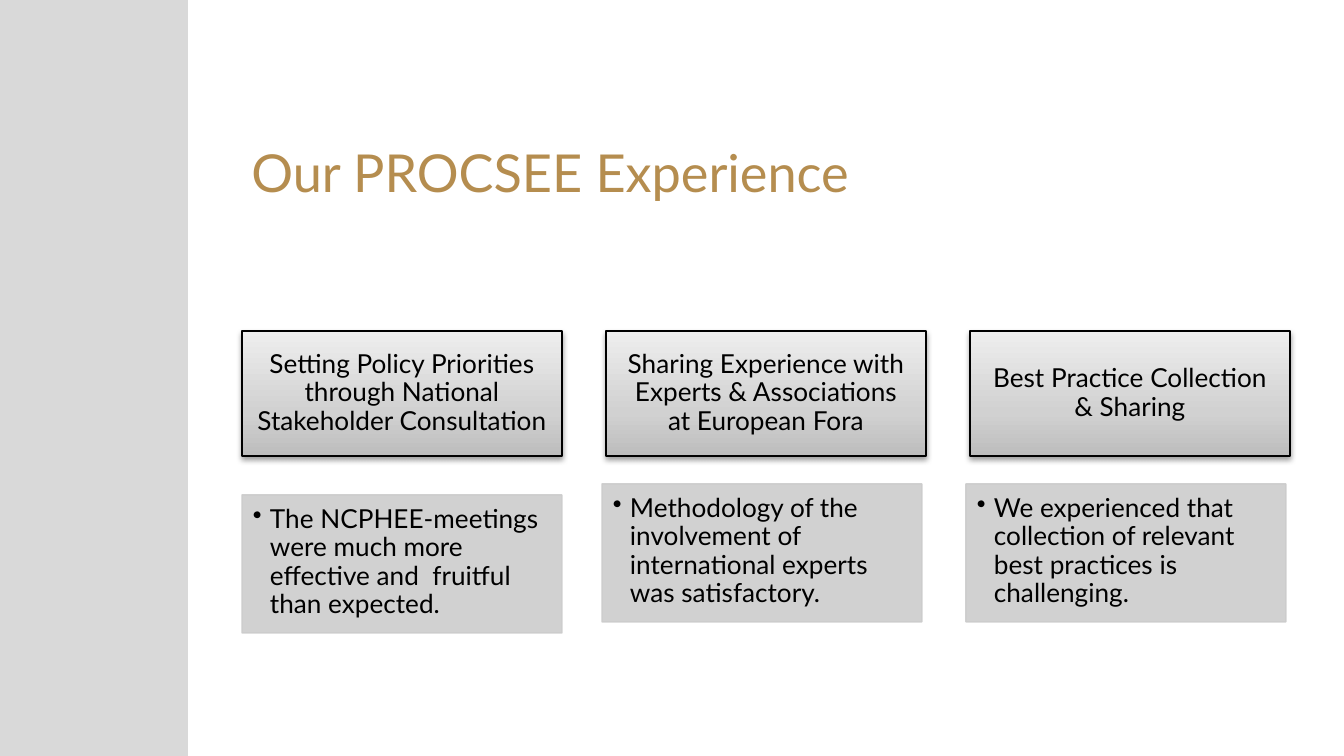
from copy import deepcopy

from lxml import etree
from pptx import Presentation
from pptx.dml.color import RGBColor
from pptx.enum.shapes import MSO_SHAPE
from pptx.enum.text import MSO_ANCHOR, PP_ALIGN
from pptx.oxml.ns import qn
from pptx.util import Emu, Pt

EMU_PER_PX = 914400 / 134.4
RECTANGLE = MSO_SHAPE.RECTANGLE
TOP, MIDDLE = MSO_ANCHOR.TOP, MSO_ANCHOR.MIDDLE
LEFT, CENTER = PP_ALIGN.LEFT, PP_ALIGN.CENTER
TITLE_ONLY = 5
FONT = "Lato"

COLORS = {
    "sidebar": "D9D9D9",
    "title": "B58D4F",
    "text": "000000",
    "detail": "CCCCCC",
    "gradient_dark": "BDBDBD",
    "gradient_middle": "D1D1D1",
    "gradient_light": "EEEEEE",
}
HEADING_GRADIENT = [(0, "gradient_dark"), (0.35, "gradient_middle"), (1, "gradient_light")]

COLUMN_LEFT, COLUMN_STEP, COLUMN_WIDTH = 242, 364, 320
HEADING_TOP, HEADING_HEIGHT, DETAIL_HEIGHT = 331, 125, 138
COLUMNS = [
    ("Setting Policy Priorities through National Stakeholder Consultation",
     "The NCPHEE-meetings were much more effective and  fruitful than expected.", 0, 495),
    ("Sharing Experience with Experts & Associations at European Fora",
     "Methodology of the involvement of international experts was satisfactory.", -4, 484),
    ("Best Practice Collection & Sharing",
     "We experienced that collection of relevant best practices is challenging.", -4, 484),
]


def px(value):
    return Emu(round(value * EMU_PER_PX))


def color(name):
    return RGBColor.from_string(COLORS[name])


def add_rectangle(slide, left, top, width, height, line_color, line_width):
    shape = slide.shapes.add_shape(RECTANGLE, px(left), px(top), px(width), px(height))
    shape.shadow.inherit = False
    shape.line.color.rgb = color(line_color)
    shape.line.width = Pt(line_width)
    return shape


def fill_solid(shape, name):
    shape.fill.solid()
    shape.fill.fore_color.rgb = color(name)


def fill_gradient(shape, stops):
    shape.fill.gradient()
    shape.fill.gradient_angle = 90
    stop_list = shape.element.spPr.find(".//" + qn("a:gsLst"))
    stop_list.insert(1, deepcopy(stop_list[0]))
    for stop, (position, name) in zip(shape.fill.gradient_stops, stops):
        stop.position = position
        stop.color.rgb = color(name)


def set_opacity(element, percent):
    for color_element in element.iter(qn("a:srgbClr")):
        etree.SubElement(color_element, qn("a:alpha"), val=str(percent * 1000))


def add_shadow(shape):
    effects = shape.element.spPr.find(qn("a:effectLst"))
    shadow = etree.SubElement(effects, qn("a:outerShdw"), blurRad=str(Pt(3.1)),
                              dist=str(Pt(1.6)), dir="5400000", rotWithShape="0")
    etree.SubElement(shadow, qn("a:srgbClr"), val=COLORS["text"])
    set_opacity(shadow, 38)


def add_bullet(paragraph, indent):
    properties = paragraph._p.get_or_add_pPr()
    properties.set("marL", str(px(indent)))
    properties.set("indent", str(-px(indent)))
    etree.SubElement(properties, qn("a:buChar"), char="•")


def format_paragraph(paragraph, size, name, alignment):
    paragraph.alignment = alignment
    paragraph.font.name = FONT
    paragraph.font.size = Pt(size)
    paragraph.font.color.rgb = color(name)


def set_text(shape, text, anchor, insets):
    frame = shape.text_frame
    frame.word_wrap = True
    frame.vertical_anchor = anchor
    (frame.margin_left, frame.margin_top,
     frame.margin_right, frame.margin_bottom) = map(px, insets)
    paragraph = frame.paragraphs[0]
    paragraph.text = text
    paragraph.line_spacing = 0.9
    return paragraph


def add_sidebar(slide):
    sidebar = add_rectangle(slide, 0, 0, 186, 756, "sidebar", 2)
    fill_solid(sidebar, "sidebar")


def set_title(slide, text):
    title = slide.shapes.title
    title.left, title.top, title.width, title.height = map(px, (238, 132, 1048, 79))
    title.text_frame.text = text
    title.text_frame.vertical_anchor = MIDDLE
    format_paragraph(title.text_frame.paragraphs[0], 28, "title", LEFT)


def add_heading(slide, left, text):
    heading = add_rectangle(slide, left, HEADING_TOP, COLUMN_WIDTH, HEADING_HEIGHT, "text", 0.75)
    fill_gradient(heading, HEADING_GRADIENT)
    add_shadow(heading)
    paragraph = set_text(heading, text, MIDDLE, (15, 8, 15, 8))
    format_paragraph(paragraph, 14, "text", CENTER)


def add_detail(slide, left, top, text):
    detail = add_rectangle(slide, left, top, COLUMN_WIDTH, DETAIL_HEIGHT, "detail", 0.75)
    fill_solid(detail, "detail")
    set_opacity(detail.element.spPr, 90)
    paragraph = set_text(detail, text, TOP, (11, 11, 15, 16))
    add_bullet(paragraph, 17)
    format_paragraph(paragraph, 14, "text", LEFT)


def main():
    presentation = Presentation()
    presentation.slide_width, presentation.slide_height = px(1344), px(756)
    slide = presentation.slides.add_slide(presentation.slide_layouts[TITLE_ONLY])
    add_sidebar(slide)
    set_title(slide, "Our PROCSEE Experience")
    for index, (heading, detail, detail_shift, detail_top) in enumerate(COLUMNS):
        left = COLUMN_LEFT + index * COLUMN_STEP
        add_heading(slide, left, heading)
        add_detail(slide, left + detail_shift, detail_top, detail)
    presentation.save("out.pptx")


if __name__ == "__main__":
    main()
